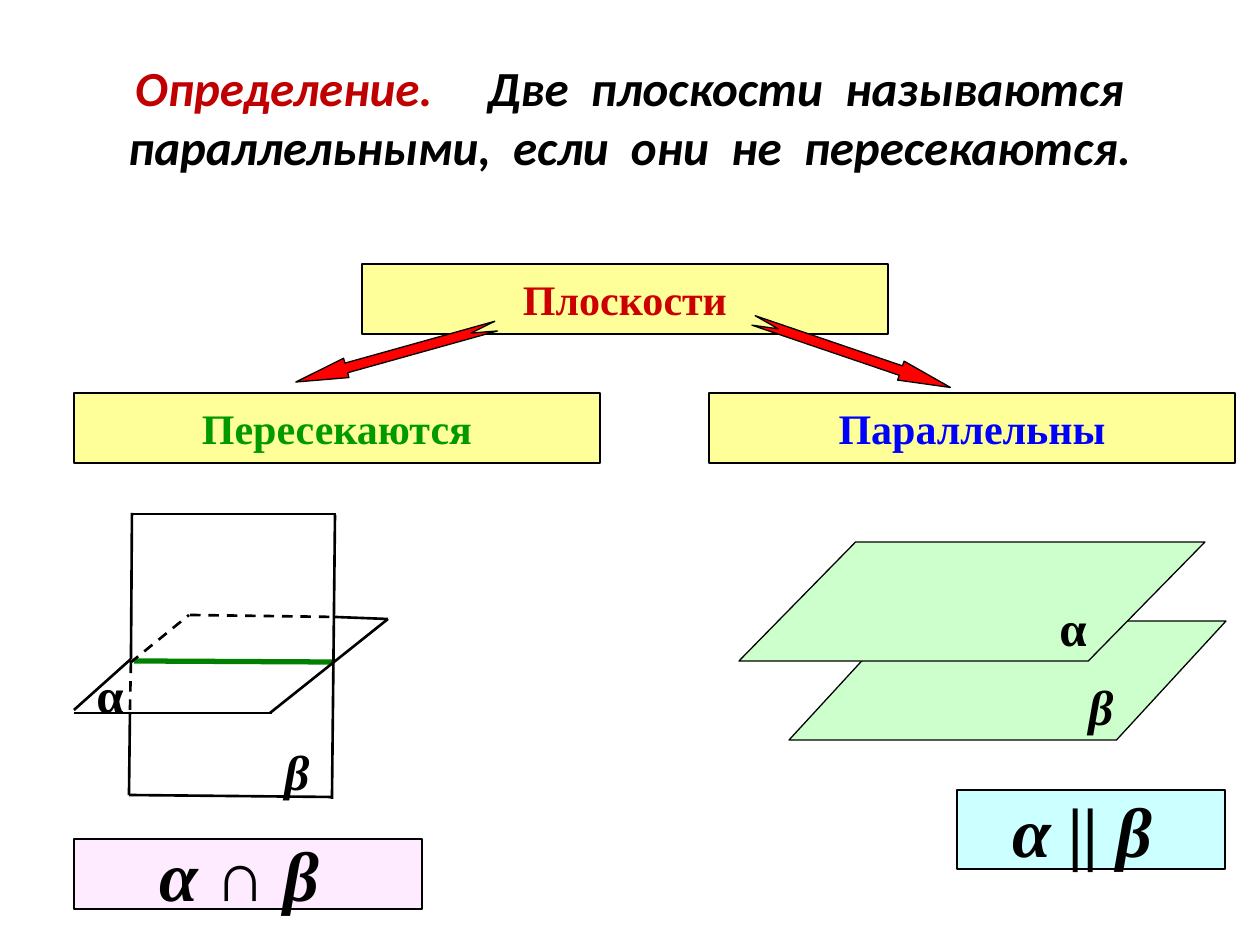
from lxml import etree
from pptx import Presentation
from pptx.dml.color import RGBColor
from pptx.enum.dml import MSO_LINE
from pptx.enum.shapes import MSO_CONNECTOR, MSO_SHAPE
from pptx.enum.text import MSO_ANCHOR, MSO_AUTO_SIZE, PP_ALIGN
from pptx.oxml.ns import qn
from pptx.util import Emu, Pt

RECT, PARALLELOGRAM = MSO_SHAPE.RECTANGLE, MSO_SHAPE.PARALLELOGRAM
ARROW = MSO_SHAPE.NOTCHED_RIGHT_ARROW
STRAIGHT, DASH = MSO_CONNECTOR.STRAIGHT, MSO_LINE.DASH
CENTER, LEFT = PP_ALIGN.CENTER, PP_ALIGN.LEFT
TOP, MIDDLE = MSO_ANCHOR.TOP, MSO_ANCHOR.MIDDLE

PX = 914400 / 126
SERIF, SANS = "Times New Roman", "Calibri"
BLACK, YELLOW, GREEN, RED = "000000", "FFFF99", "CCFFCC", "FF0000"

DEFINITION = [
    ("Определение.     ", "C00000"),
    ("Две  плоскости  называются параллельными,  если  они  не  пересекаются.", BLACK),
]
TITLE_BOX = (34, 38, 1191, 157)

CASE_SIZE = (526, 70)
CASES = [
    ("Плоскости", "CC0000", (362, 264)),
    ("Пересекаются", "009900", (74, 393)),
    ("Параллельны", "0000FF", (709, 393)),
]
BRANCH_SIZE = (208, 20)
BRANCHES = [((748, 344), 18.8), ((292, 344), 164.4)]

INTERSECTION_LINE = ((134, 661), (332, 662))
SOLID_EDGES = [
    ((131, 659), (132, 513)),
    ((332, 799), (335, 515)),
    ((132, 514), (336, 514)),
    ((335, 617), (388, 619)),
    ((129, 795), (130, 712)),
    ((129, 795), (332, 797)),
    ((74, 710), (131, 659)),
    ((270, 713), (388, 619)),
    ((74, 713), (272, 713)),
]
HIDDEN_EDGES = [
    ((130, 710), (131, 659)),
    ((130, 663), (189, 615)),
    ((190, 615), (336, 617)),
]
PARALLEL_PLANES = [
    ((789, 621, 437, 119), 0.92),
    ((739, 542, 466, 119), 0.98),
]
PLANE_LABELS = [
    ("α", False, (84, 658, 53, 69)),
    ("β", True, (272, 735, 50, 69)),
    ("β", True, (1076, 670, 50, 72)),
    ("α", False, (1047, 591, 53, 72)),
]
FORMULAS = [
    ("α || β ", "CCFFFF", (957, 790, 268, 79)),
    ("α ∩ β ", "FFEBFF", (74, 839, 348, 70)),
]


def px(*lengths):
    return [Emu(round(length * PX)) for length in lengths]


def rgb(color):
    return RGBColor.from_string(color)


def write(holder, runs, size, font=SERIF, italic=False, align=CENTER,
          anchor=MIDDLE, wrap=False):
    frame = holder.text_frame
    frame.auto_size = MSO_AUTO_SIZE.NONE
    frame.word_wrap = wrap
    frame.vertical_anchor = anchor
    paragraph = frame.paragraphs[0]
    paragraph.alignment = align
    for words, color in runs:
        run = paragraph.add_run()
        run.text = words
        run.font.name = font
        run.font.size = Pt(size)
        run.font.bold = True
        run.font.italic = italic
        run.font.color.rgb = rgb(color)


def add_figure(slide, preset, box, fill, adjustments=()):
    figure = slide.shapes.add_shape(preset, *px(*box))
    figure.shadow.inherit = False
    figure.fill.solid()
    figure.fill.fore_color.rgb = rgb(fill)
    figure.line.color.rgb = rgb(BLACK)
    figure.line.width = Pt(0.75)
    for index, value in enumerate(adjustments):
        figure.adjustments[index] = value
    return figure


def add_edge(slide, ends, color=BLACK, width=1.5, dash=None):
    start, end = ends
    edge = slide.shapes.add_connector(STRAIGHT, *px(*start, *end))
    edge.line.color.rgb = rgb(color)
    edge.line.width = Pt(width)
    if dash:
        edge.line.dash_style = dash
    etree.SubElement(edge._element.spPr, qn("a:effectLst"))


def add_label(slide, letter, italic, box):
    label = slide.shapes.add_textbox(*px(*box))
    write(label, [(letter, BLACK)], 28, italic=italic, align=LEFT, anchor=TOP)


def main():
    deck = Presentation()
    deck.slide_width, deck.slide_height = px(1260, 945)
    slide = deck.slides.add_slide(deck.slide_layouts[5])

    title = slide.shapes.title
    title.left, title.top, title.width, title.height = px(*TITLE_BOX)
    write(title, DEFINITION, 28, font=SANS, italic=True, wrap=True)

    for name, color, corner in CASES:
        case = add_figure(slide, RECT, corner + CASE_SIZE, YELLOW)
        write(case, [(name, color)], 24)
    for corner, angle in BRANCHES:
        branch = add_figure(slide, ARROW, corner + BRANCH_SIZE, RED, (0.5, 2.62))
        branch.rotation = angle

    add_edge(slide, INTERSECTION_LINE, "008000", 3)
    for ends in SOLID_EDGES:
        add_edge(slide, ends)
    for ends in HIDDEN_EDGES:
        add_edge(slide, ends, dash=DASH)

    for box, slant in PARALLEL_PLANES:
        add_figure(slide, PARALLELOGRAM, box, GREEN, (slant,))
    for letter, italic, box in PLANE_LABELS:
        add_label(slide, letter, italic, box)
    for formula, fill, box in FORMULAS:
        panel = add_figure(slide, RECT, box, fill)
        write(panel, [(formula, BLACK)], 40, italic=True)

    deck.save("out.pptx")


if __name__ == "__main__":
    main()
